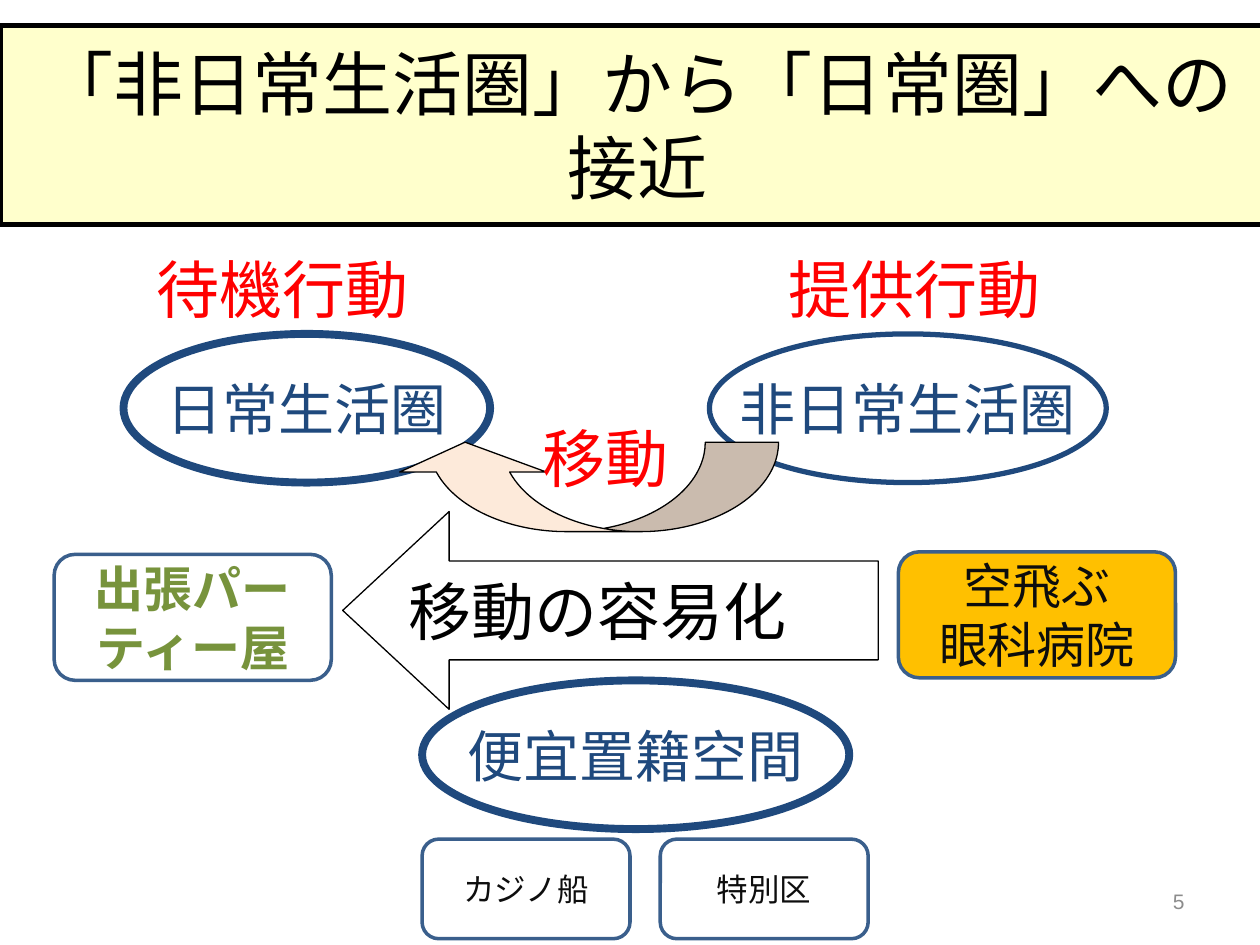
from dataclasses import dataclass

from pptx import Presentation
from pptx.dml.color import RGBColor
from pptx.enum.shapes import MSO_SHAPE
from pptx.enum.text import MSO_ANCHOR, MSO_AUTO_SIZE, PP_ALIGN
from pptx.util import Inches, Pt

RECTANGLE = MSO_SHAPE.RECTANGLE
ELLIPSE = MSO_SHAPE.OVAL
ROUNDED = MSO_SHAPE.ROUNDED_RECTANGLE
CURVED_ARROW = MSO_SHAPE.CURVED_DOWN_ARROW
BLOCK_ARROW = MSO_SHAPE.RIGHT_ARROW
LEFT, CENTER, RIGHT = PP_ALIGN.LEFT, PP_ALIGN.CENTER, PP_ALIGN.RIGHT
TOP, MIDDLE = MSO_ANCHOR.TOP, MSO_ANCHOR.MIDDLE
GROW = MSO_AUTO_SIZE.SHAPE_TO_FIT_TEXT


@dataclass(frozen=True)
class Theme:
    font: str = "Calibri"
    number_font: str = "Arial"
    black: str = "000000"
    white: str = "FFFFFF"
    cream: str = "FFFFCC"
    navy: str = "1F497D"
    border: str = "3A5F8C"
    red: str = "FF0000"
    peach: str = "FDEADA"
    amber: str = "FFC000"
    green: str = "77933C"
    ink: str = "0D0D0D"
    gray: str = "8C8C8C"
    title: int = 40
    heading: int = 36
    sphere: int = 32
    example: int = 28
    small: int = 18
    number: int = 12


THEME = Theme()


def write_text(shape, text, size, color, font=THEME.font, bold=False,
               align=CENTER, anchor=MIDDLE, wrap=True):
    frame = shape.text_frame
    frame.word_wrap = wrap
    frame.vertical_anchor = anchor
    for index, line in enumerate(text.split("\n")):
        para = frame.add_paragraph() if index else frame.paragraphs[0]
        para.alignment = align
        span = para.add_run()
        span.text = line
        span.font.name = font
        span.font.size = Pt(size)
        span.font.bold = bold
        span.font.color.rgb = RGBColor.from_string(color)


def add_figure(page, kind, box, line, width, fill=None, flips=(), adjust=()):
    shape = page.shapes.add_shape(kind, *map(Inches, box))
    shape.shadow.inherit = False
    if fill:
        shape.fill.solid()
        shape.fill.fore_color.rgb = RGBColor.from_string(fill)
    else:
        shape.fill.background()
    shape.line.color.rgb = RGBColor.from_string(line)
    shape.line.width = Pt(width)
    for index, value in enumerate(adjust):
        shape.adjustments[index] = value
    for flip in flips:
        shape.element.spPr.xfrm.set(flip, "1")
    return shape


def add_page_number(page, box, text):
    label = page.shapes.add_textbox(*map(Inches, box))
    write_text(label, text, THEME.number, THEME.gray,
               font=THEME.number_font, align=RIGHT)


def add_title(page, box, text):
    banner = add_figure(page, RECTANGLE, box, THEME.black, 3, fill=THEME.cream)
    write_text(banner, text, THEME.title, THEME.black)


def add_heading(page, box, text):
    label = page.shapes.add_textbox(*map(Inches, box))
    write_text(label, text, THEME.heading, THEME.red,
               align=LEFT, anchor=TOP, wrap=False)
    label.text_frame.auto_size = GROW


def add_sphere(page, box, text, width=4.5):
    sphere = add_figure(page, ELLIPSE, box, THEME.navy, width)
    write_text(sphere, text, THEME.sphere, THEME.navy, wrap=False)


def add_example(page, box, text, size=THEME.example, color=THEME.ink,
                fill=None, bold=False):
    card = add_figure(page, ROUNDED, box, THEME.border, 2, fill=fill)
    write_text(card, text, size, color, bold=bold)


def add_movement(page, box):
    left, top, width, height = box
    add_figure(page, CURVED_ARROW, (left + 0.39, top, 3.07, 0.71),
               THEME.black, 0.75, fill=THEME.peach,
               flips=("flipH", "flipV"), adjust=(0.82, 1.639, 0.333))
    add_heading(page, (left + 1.49, top - 0.23, 1.2, 0.7), "移動")
    arrow = add_figure(page, BLOCK_ARROW,
                       (left, top + 0.55, width, height - 0.55),
                       THEME.black, 0.75, fill=THEME.white,
                       flips=("flipH",), adjust=(0.5, 0.538))
    write_text(arrow, "移動の容易化", THEME.heading, THEME.black,
               align=LEFT, wrap=False)


def add_flag_space(page, box):
    left, top, width, height = box
    add_sphere(page, (left, top, width, 1.18), "便宜置籍空間")
    card_height = 0.79
    for index, text in enumerate(("カジノ船", "特別区")):
        add_example(page, (left + index * 1.89, top + height - card_height,
                           1.65, card_height), text, size=THEME.small)


def main():
    deck = Presentation()
    deck.slide_width, deck.slide_height = Inches(10), Inches(7.5)
    page = deck.slides.add_slide(deck.slide_layouts[6])
    add_page_number(page, (7.17, 6.95, 2.33, 0.4), "5")
    add_title(page, (0, 0.2, 10.12, 1.58), "「非日常生活圏」から「日常圏」への接近")
    add_sphere(page, (0.98, 2.65, 2.91, 1.18), "日常生活圏")
    add_sphere(page, (5.63, 2.65, 3.15, 1.18), "非日常生活圏", width=3)
    add_movement(page, (2.72, 3.51, 4.25, 2.12))
    add_heading(page, (6.16, 1.94, 2.22, 0.71), "提供行動")
    add_heading(page, (1.14, 1.94, 2.22, 0.71), "待機行動")
    add_flag_space(page, (3.35, 5.4, 3.39, 2.05))
    add_example(page, (7.13, 4.38, 2.2, 1), "空飛ぶ\n眼科病院",
                fill=THEME.amber)
    add_example(page, (0.43, 4.4, 2.2, 1), "出張パーティー屋",
                color=THEME.green, bold=True)
    deck.save("out.pptx")


if __name__ == "__main__":
    main()
